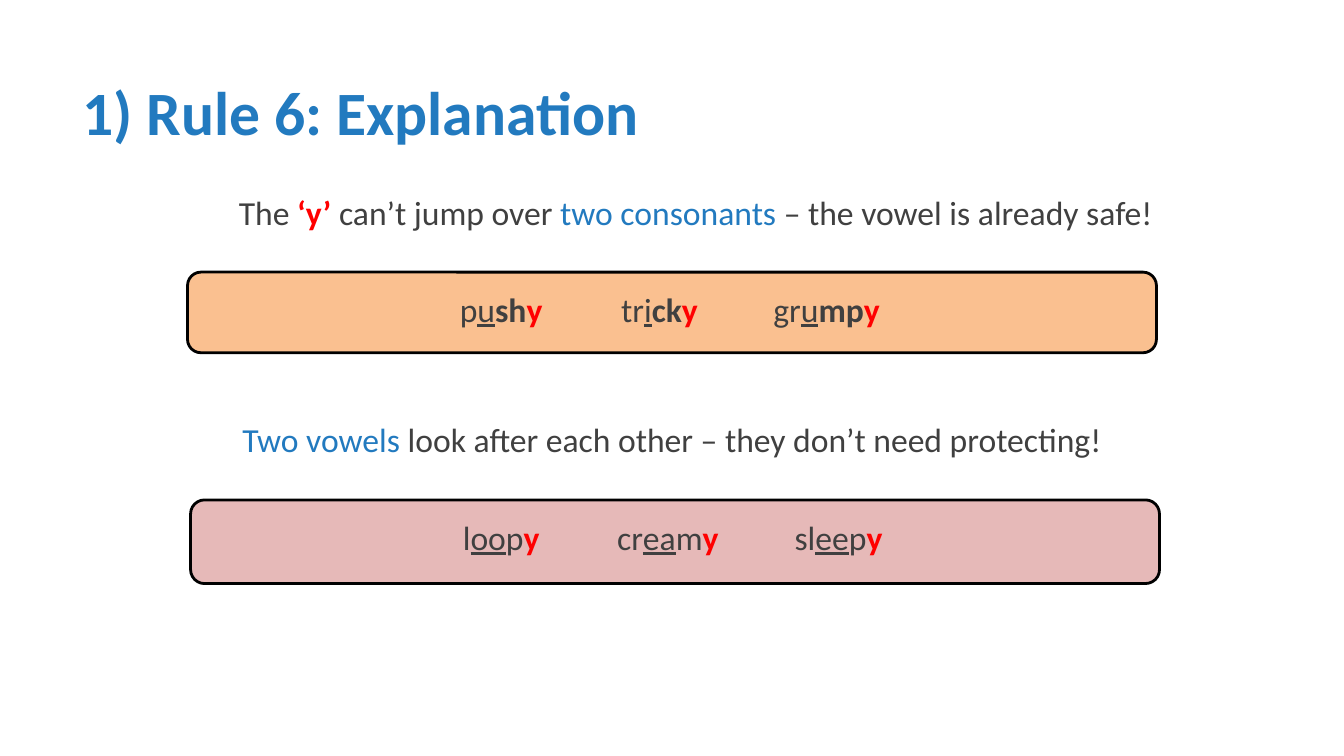
"""Build the Rule 6 explanation slide: two spelling rules, each with a bar of example words."""
from lxml import etree
from pptx import Presentation
from pptx.dml.color import RGBColor
from pptx.enum.shapes import MSO_SHAPE as Shape
from pptx.enum.text import MSO_ANCHOR as Anchor, PP_ALIGN as Align
from pptx.oxml.ns import qn
from pptx.util import Inches, Pt

BLUE = RGBColor(0x22, 0x7A, 0xBF)
GREY = RGBColor(0x40, 0x40, 0x40)
RED = RGBColor(0xFF, 0x00, 0x00)
BLACK = RGBColor(0x00, 0x00, 0x00)
ORANGE = RGBColor(0xFA, 0xC0, 0x90)
PINK = RGBColor(0xE6, 0xB9, 0xB8)

STYLES = {
    "plain": {"color": GREY},
    "key": {"color": BLUE},
    "heading": {"color": BLUE, "bold": True},
    "vowel": {"color": GREY, "underline": True},
    "strong": {"color": GREY, "bold": True},
    "ending": {"color": RED, "bold": True},
}

TITLE = [("1) Rule 6: Explanation", "heading")]
TITLE_AREA = (0.72, 0.37, 11.5, 1.45)

RULES = [
    {
        "sentence": [("The ", "plain"), ("‘y’", "ending"), (" can’t jump over ", "plain"),
                     ("two consonants ", "key"), ("– the vowel is already safe!", "plain")],
        "sentence_area": (2.02, 1.85, 9.76, 0.92),
        "examples": [
            [("p", "plain"), ("u", "vowel"), ("sh", "strong"), ("y", "ending")],
            [("tr", "plain"), ("i", "vowel"), ("ck", "strong"), ("y", "ending")],
            [("gr", "plain"), ("u", "vowel"), ("mp", "strong"), ("y", "ending")],
        ],
        "bar_area": (1.86, 2.7, 9.61, 0.8),
        "bar_fill": ORANGE,
        "word_stops": (1.6, 3.11),
    },
    {
        "sentence": [("Two vowels ", "key"),
                     ("look after each other – they don’t need protecting!", "plain")],
        "sentence_area": (1.98, 4.11, 9.37, 0.92),
        "examples": [
            [("l", "plain"), ("oo", "vowel"), ("p", "plain"), ("y", "ending")],
            [("cr", "plain"), ("ea", "vowel"), ("m", "plain"), ("y", "ending")],
            [("sl", "plain"), ("ee", "vowel"), ("p", "plain"), ("y", "ending")],
        ],
        "bar_area": (1.89, 4.96, 9.61, 0.83),
        "bar_fill": PINK,
        "word_stops": (1.53, 3.29),
    },
]
WORDS_DROP = 0.115
WORDS_HEIGHT = 0.94
WORDS_INDENT = 2.7


def add_text(slide, area, pieces, size=24, align=Align.LEFT, anchor=Anchor.TOP, indent=0.1, stops=()):
    frame = slide.shapes.add_textbox(*map(Inches, area)).text_frame
    frame.word_wrap = True
    frame.vertical_anchor = anchor
    frame.margin_left = Inches(indent)
    paragraph = frame.paragraphs[0]
    paragraph.alignment = align
    if stops:
        tabs = etree.SubElement(paragraph._p.get_or_add_pPr(), qn("a:tabLst"))
        for stop in stops:
            etree.SubElement(tabs, qn("a:tab"), pos=str(Inches(stop)), algn="l")
    for text, style in pieces:
        run = paragraph.add_run()
        run.text = text
        looks = {"name": "Calibri", "size": Pt(size), **STYLES[style]}
        run.font.color.rgb = looks.pop("color")
        for attribute, value in looks.items():
            setattr(run.font, attribute, value)


def add_bar(slide, area, fill):
    bar = slide.shapes.add_shape(Shape.ROUNDED_RECTANGLE, *map(Inches, area))
    bar.shadow.inherit = False
    bar.fill.solid()
    bar.fill.fore_color.rgb = fill
    bar.line.color.rgb = BLACK
    bar.line.width = Pt(2)


def add_rule(slide, rule):
    add_bar(slide, rule["bar_area"], rule["bar_fill"])
    left, top, width, _ = rule["bar_area"]
    first, *others = rule["examples"]
    pieces = list(first)
    for (start, style), *rest in others:
        pieces += [("\t" + start, style), *rest]
    add_text(slide, (left, top + WORDS_DROP, width, WORDS_HEIGHT), pieces,
             indent=WORDS_INDENT, stops=rule["word_stops"])
    add_text(slide, rule["sentence_area"], rule["sentence"], align=Align.CENTER)


def main():
    deck = Presentation()
    deck.slide_width, deck.slide_height = Inches(13.33), Inches(7.5)
    slide = deck.slides.add_slide(deck.slide_layouts[6])
    for rule in RULES:
        add_rule(slide, rule)
    add_text(slide, TITLE_AREA, TITLE, size=44, anchor=Anchor.MIDDLE)
    deck.save("out.pptx")


if __name__ == "__main__":
    main()
